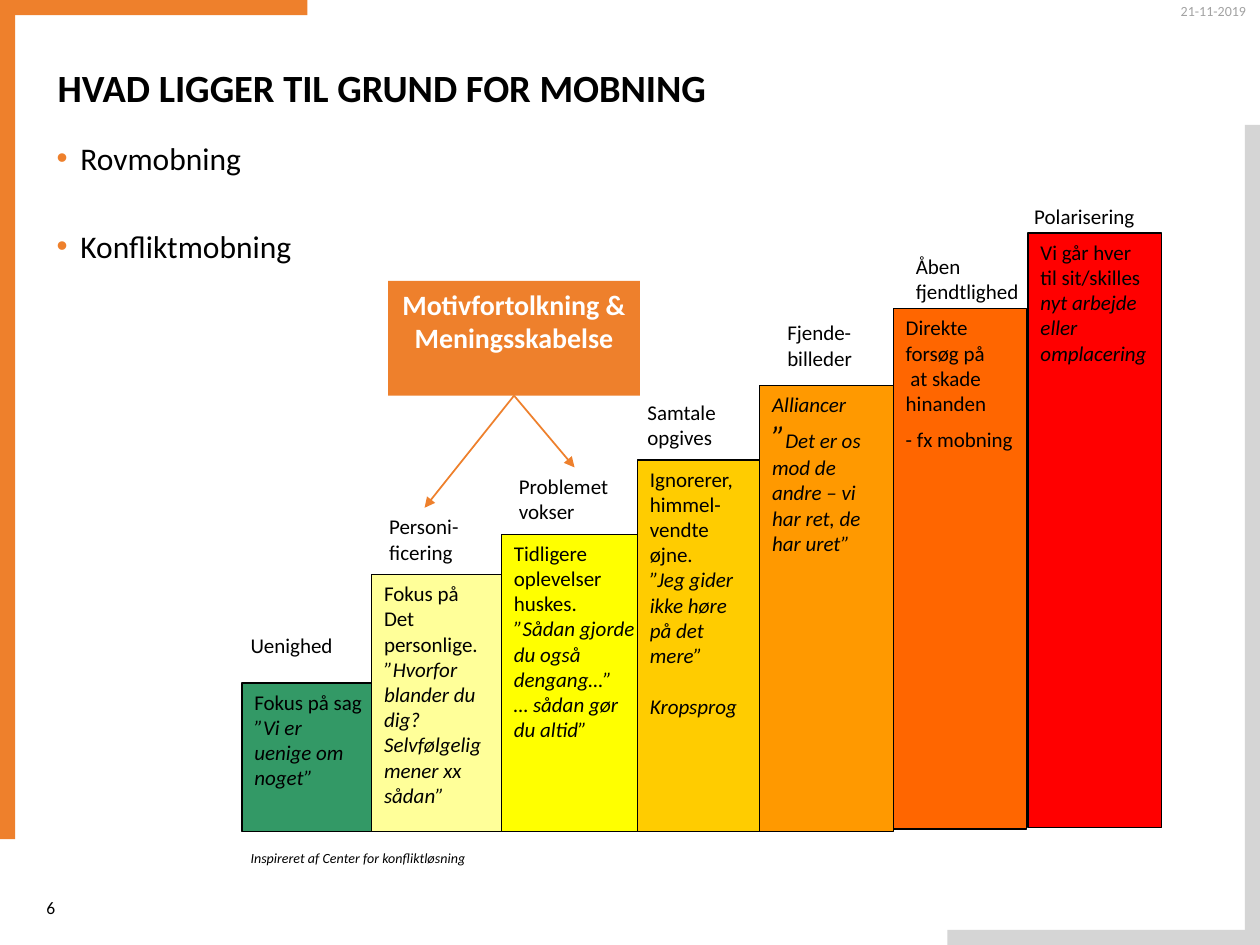
from lxml.etree import SubElement
from pptx import Presentation
from pptx.dml.color import RGBColor
from pptx.enum.shapes import MSO_CONNECTOR, MSO_SHAPE
from pptx.enum.text import MSO_ANCHOR, PP_ALIGN
from pptx.oxml.ns import qn
from pptx.util import Inches, Pt

ORANGE = RGBColor(0xEE, 0x80, 0x2C)
LIGHT = RGBColor(0xD5, 0xD5, 0xD5)
GRAY = RGBColor(0xA2, 0xA2, 0xA2)
BLACK = RGBColor(0x00, 0x00, 0x00)
WHITE = RGBColor(0xFF, 0xFF, 0xFF)
GREEN = RGBColor(0x33, 0x99, 0x66)
CREAM = RGBColor(0xFF, 0xFF, 0x99)
YELLOW = RGBColor(0xFF, 0xFF, 0x00)
GOLD = RGBColor(0xFF, 0xCC, 0x00)
AMBER = RGBColor(0xFF, 0x99, 0x00)
RUST = RGBColor(0xFF, 0x66, 0x00)
RED = RGBColor(0xFF, 0x00, 0x00)

EDGES = [
    (9.88, 0.99, 0.12, 6.51, LIGHT),
    (0, 0, 0.12, 6.66, ORANGE),
    (0.08, 0, 2.36, 0.12, ORANGE),
    (7.52, 7.38, 2.36, 0.12, LIGHT),
]
STEPS = [
    (1.92, 5.42, 1.06, 6.6, GREEN, ["Fokus på sag"], ["”Vi er uenige om noget”"]),
    (2.95, 4.56, 1.06, 6.6, CREAM, ["Fokus på", "Det", "personlige."],
     ["”Hvorfor", "blander du", "dig?", "Selvfølgelig", "mener xx", "sådan”"]),
    (3.98, 4.24, 1.08, 6.6, YELLOW, ["Tidligere", "oplevelser", "huskes."],
     ["”Sådan gjorde", "du også", "dengang…”", "… sådan gør", "du altid”"]),
    (5.06, 3.65, 1.06, 6.6, GOLD, ["Ignorerer,", "himmel-", "vendte", "øjne."],
     ["”Jeg gider", "ikke høre", "på det", "mere”", "Kropsprog"]),
    (6.03, 3.06, 1.06, 6.6, AMBER, [],
     ["Alliancer", "”Det er os", "mod de", "andre – vi", "har ret, de", "har uret”"]),
    (7.09, 2.45, 1.06, 6.58, RUST,
     ["Direkte", "forsøg på", " at skade", "hinanden", "- fx mobning"], []),
    (8.16, 1.85, 1.06, 6.57, RED, ["Vi går hver", "til sit/skilles"],
     ["nyt arbejde", "eller", "omplacering"]),
]
LABELS = [
    (1.89, 4.97, 0.97, ["Uenighed"]),
    (2.99, 4.03, 0.78, ["Personi-", "ficering"]),
    (4.02, 3.71, 1.1, ["Problemet", "vokser"]),
    (5.04, 3.12, 0.94, ["Samtale", "opgives"]),
    (6.15, 2.49, 0.76, ["Fjende-", "billeder"]),
    (7.17, 1.96, 1.05, ["Åben", "fjendtlighed"]),
    (8.11, 1.57, 1.08, ["Polarisering"]),
]
GAPS = {"Kropsprog": 14.6, "- fx mobning": 6, "Konfliktmobning": 29}


class Deck:
    """Hold the text style and the current slide, and draw each kind of element."""

    def __init__(self, slide, face="Calibri"):
        self.slide = slide
        self.base = {"name": face, "size": Pt(12)}

    def style(self, run, color, **look):
        for key, value in {**self.base, **look}.items():
            setattr(run.font, key, value)
        run.font.color.rgb = color

    def label(self, shape, lines, color=BLACK, align=PP_ALIGN.LEFT, wrap=True,
              anchor=MSO_ANCHOR.TOP, slant=(), **look):
        frame = shape.text_frame
        for key, value in {"word_wrap": wrap, "vertical_anchor": anchor}.items():
            setattr(frame, key, value)
        for num, line in enumerate([*lines, *slant]):
            para = frame.add_paragraph() if num else frame.paragraphs[0]
            para.alignment = align
            if line in GAPS:
                para.space_before = Pt(GAPS[line])
            big = line == "”Det er os"
            for part in (line[:1], line[1:]) if big else (line,):
                run = para.add_run()
                run.text = part
                self.style(run, color, **look)
                if num >= len(lines):
                    run.font.italic = True
                if part == "”":
                    run.font.size = Pt(18)
        return shape

    def rect(self, left, top, width, height, fill, edge=None):
        shape = self.slide.shapes.add_shape(
            MSO_SHAPE.RECTANGLE, Inches(left), Inches(top), Inches(width), Inches(height))
        shape.shadow.inherit = False
        shape.fill.solid()
        shape.fill.fore_color.rgb = fill
        if edge is None:
            shape.line.fill.background()
        else:
            shape.line.color.rgb = edge
            shape.line.width = Pt(0.75)
        return shape

    def text(self, left, top, width, height, lines, **look):
        box = self.slide.shapes.add_textbox(
            Inches(left), Inches(top), Inches(width), Inches(height))
        return self.label(box, lines, **look)

    def bullets(self, *spot, **look):
        box = self.text(*spot, **look)
        for para in box.text_frame.paragraphs:
            props = para._p.get_or_add_pPr()
            props.set("marL", str(Inches(0.19)))
            props.set("indent", str(-Inches(0.19)))
            tint = SubElement(props, qn("a:buClr"))
            SubElement(tint, qn("a:srgbClr"), val=str(ORANGE))
            SubElement(props, qn("a:buFont"), typeface="Arial")
            SubElement(props, qn("a:buChar"), char="•")

    def arrow(self, box, right, down):
        line = self.slide.shapes.add_connector(
            MSO_CONNECTOR.STRAIGHT, 0, 0, Inches(right), Inches(down))
        line.begin_connect(box, 2)
        line.line.color.rgb = ORANGE
        line.line.width = Pt(1)
        SubElement(line.line._get_or_add_ln(), qn("a:tailEnd"), type="triangle")
        SubElement(line._element.spPr, qn("a:effectLst"))


def main():
    prs = Presentation()
    prs.slide_width, prs.slide_height = Inches(10), Inches(7.5)
    deck = Deck(prs.slides.add_slide(prs.slide_layouts[6]))
    for edge in EDGES:
        deck.rect(*edge)
    deck.text(0.36, 0.46, 8.81, 0.47, ["HVAD LIGGER TIL GRUND FOR MOBNING"],
              size=Pt(22), bold=True)
    deck.bullets(0.35, 1.05, 8.81, 5.62, ["Rovmobning", "Konfliktmobning"], size=Pt(18))
    deck.text(0.27, 7.04, 1.08, 0.33, ["6"], anchor=MSO_ANCHOR.MIDDLE, size=Pt(10))
    deck.text(9.02, -0.03, 0.97, 0.24, ["21-11-2019"], color=GRAY,
              align=PP_ALIGN.RIGHT, size=Pt(8))
    for left, top, width, base, fill, plain, slant in STEPS:
        step = deck.rect(left, top, width, base - top, fill, BLACK)
        deck.label(step, plain, slant=slant, wrap=fill == GREEN)
    for left, top, width, lines in LABELS:
        deck.text(left, top, width, 0.1 + 0.2 * len(lines), lines)
    deck.text(1.89, 6.69, 3.39, 0.24, ["Inspireret af Center for konfliktløsning"],
              size=Pt(8), italic=True)
    motive = deck.rect(3.08, 2.23, 2, 0.91, ORANGE)
    deck.label(motive, ["Motivfortolkning &", "Meningsskabelse"], color=WHITE,
               align=PP_ALIGN.CENTER, size=Pt(16), bold=True)
    deck.arrow(motive, 3.37, 4.03)
    deck.arrow(motive, 4.56, 3.71)
    prs.save("out.pptx")


if __name__ == "__main__":
    main()
